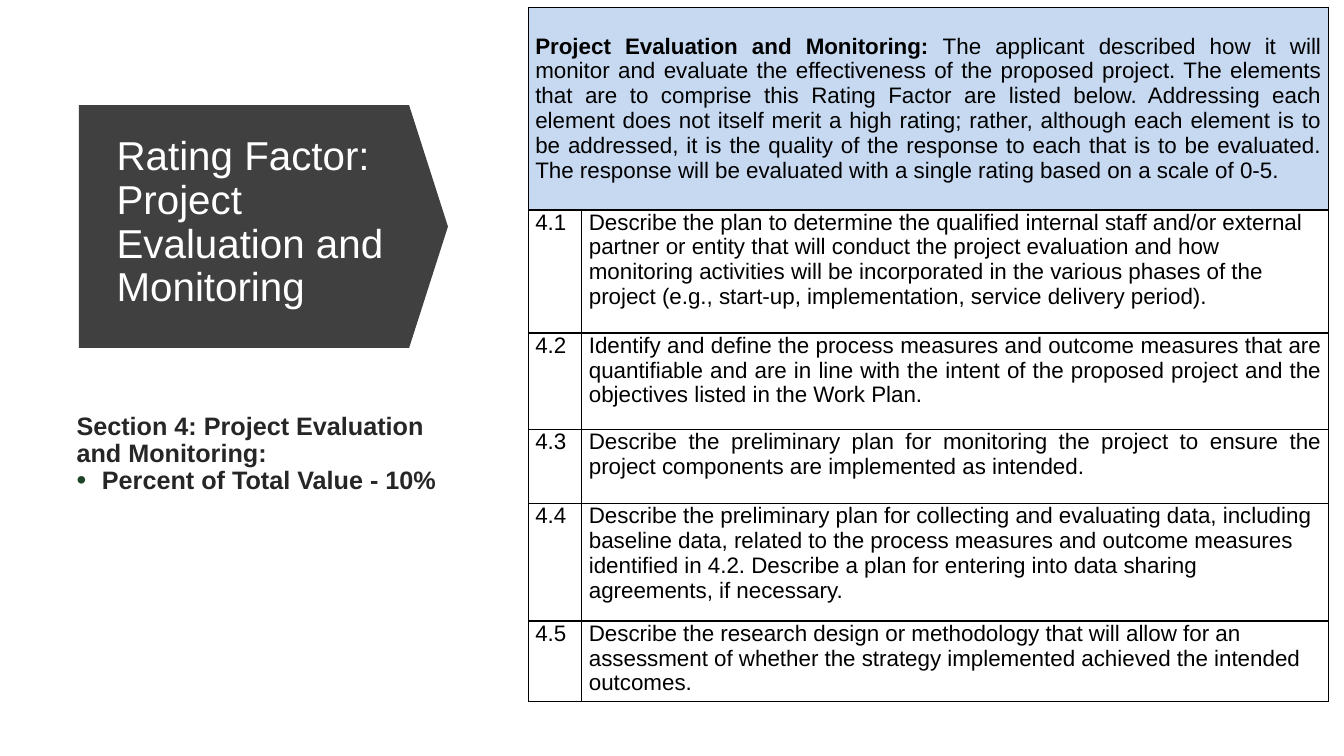
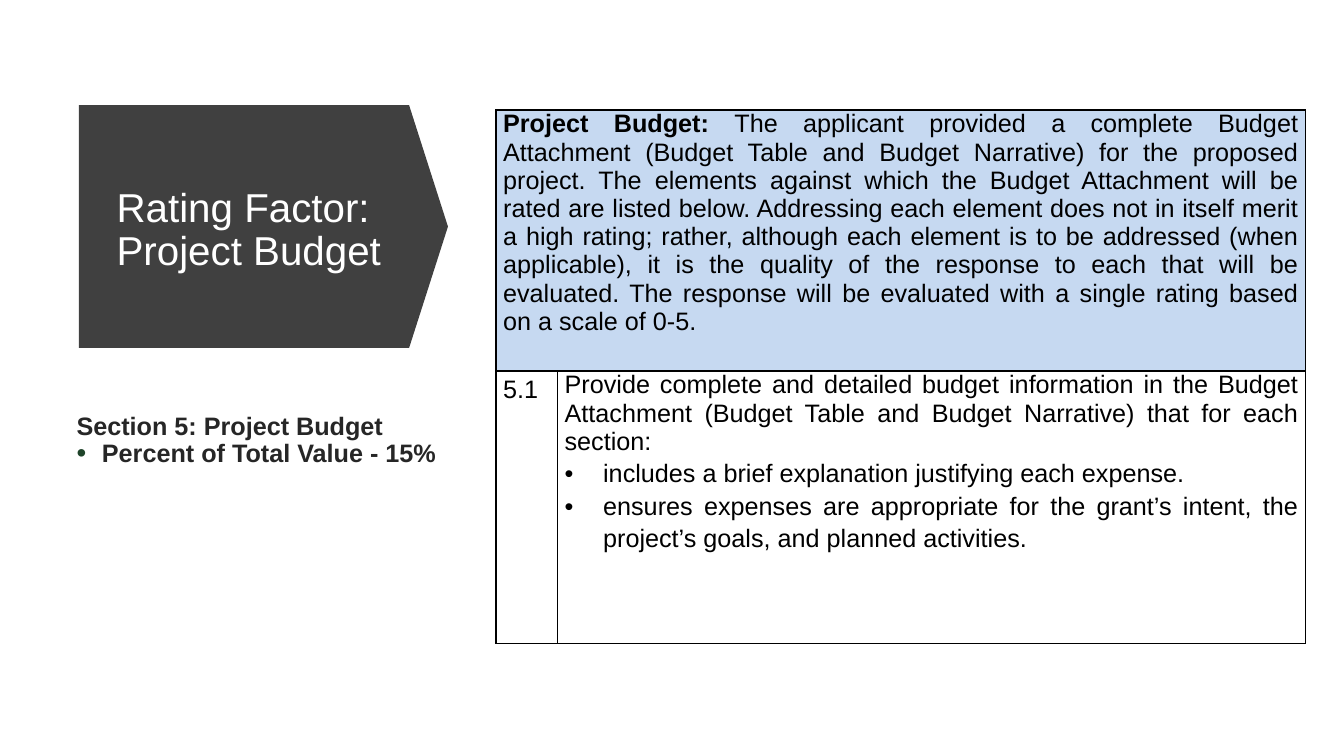
from dataclasses import dataclass

import lxml.etree
import pptx
import pptx.dml.color
import pptx.enum.shapes
import pptx.enum.text
import pptx.oxml
import pptx.oxml.ns
import pptx.util

Cm = pptx.util.Cm
Pt = pptx.util.Pt
ALIGN = pptx.enum.text.PP_ALIGN
ANCHOR = pptx.enum.text.MSO_ANCHOR
COLORS = {
    "arrow": "404040",
    "title": "FFFFFF",
    "body": "262626",
    "bullet": "1F442A",
    "text": "000000",
    "border": "000000",
    "header": "C6D9F1",
    "cell": "FFFFFF",
}


def color(name):
    return pptx.dml.color.RGBColor.from_string(COLORS[name])


@dataclass
class Line:
    text: str
    lead: str = ""
    bold: bool = False
    justify: bool = False
    spacing: float = 1.0
    after: float = 0
    indent: float = 0
    bullet_color: str = ""
    bullet_size: int = 100


class Deck:
    """Holds the shared style and the slide being built."""

    font = "Arial"

    def __init__(self):
        self.presentation = pptx.Presentation()
        self.presentation.slide_width = Cm(33.87)
        self.presentation.slide_height = Cm(19.05)
        self.slide = None

    def add_slide(self):
        layout = self.presentation.slide_layouts[6]
        self.slide = self.presentation.slides.add_slide(layout)

    def bullet(self, paragraph, line):
        properties = paragraph._p.get_or_add_pPr()
        properties.set("marL", str(Cm(line.indent)))
        properties.set("indent", str(-Cm(line.indent)))
        tag = pptx.oxml.ns.qn
        if line.bullet_color:
            fill = lxml.etree.SubElement(properties, tag("a:buClr"))
            lxml.etree.SubElement(fill, tag("a:srgbClr"), val=COLORS[line.bullet_color])
        lxml.etree.SubElement(properties, tag("a:buSzPct"), val=str(line.bullet_size * 1000))
        lxml.etree.SubElement(properties, tag("a:buFont"), typeface=self.font)
        lxml.etree.SubElement(properties, tag("a:buChar"), char="•")

    def fill_text(self, text_frame, lines, size, color_name):
        text_frame.word_wrap = True
        text_frame.text = "\n".join(line.lead or line.text for line in lines)
        for paragraph, line in zip(text_frame.paragraphs, lines):
            if line.lead:
                paragraph.add_run().text = line.text
            paragraph.alignment = ALIGN.JUSTIFY if line.justify else ALIGN.LEFT
            paragraph.line_spacing = line.spacing
            paragraph.space_after = Pt(line.after)
            if line.indent:
                self.bullet(paragraph, line)
            for run in paragraph.runs:
                run.font.name = self.font
                run.font.size = Pt(size)
                run.font.bold = line.bold
                run.font.color.rgb = color(color_name)
            if line.lead:
                paragraph.runs[0].font.bold = True

    def text(self, box, lines, size, color_name, anchor=ANCHOR.TOP):
        shape = self.slide.shapes.add_textbox(*map(Cm, box))
        shape.text_frame.vertical_anchor = anchor
        self.fill_text(shape.text_frame, lines, size, color_name)

    def title(self, text, box):
        shape = self.slide.shapes.add_shape(
            pptx.enum.shapes.MSO_SHAPE.PENTAGON, Cm(1.99), Cm(2.65), Cm(9.3), Cm(6.12)
        )
        shape.adjustments[0] = 0.16
        shape.shadow.inherit = False
        shape.fill.solid()
        shape.fill.fore_color.rgb = color("arrow")
        shape.line.fill.background()
        self.text(box, [Line(text, spacing=0.9)], 28.8, "title", ANCHOR.MIDDLE)

    def section(self, heading, percent):
        lines = [
            Line(heading, bold=True, spacing=0.9),
            Line(f"Percent of Total Value - {percent}%", bold=True, spacing=0.9,
                 indent=0.64, bullet_color="bullet", bullet_size=110),
        ]
        self.text((1.68, 10.29, 10.34, 2.41), lines, 18, "body")

    def style_cell(self, cell, fill_name):
        cell.margin_left = cell.margin_right = Cm(0.18)
        cell.margin_top = cell.margin_bottom = 0
        cell.fill.solid()
        cell.fill.fore_color.rgb = color(fill_name)
        properties = cell._tc.get_or_add_tcPr()
        for index, side in enumerate("LRTB"):
            border = pptx.oxml.parse_xml(
                f'<a:ln{side} {pptx.oxml.ns.nsdecls("a")} w="{Pt(1)}"><a:solidFill>'
                f'<a:srgbClr val="{COLORS["border"]}"/></a:solidFill></a:ln{side}>'
            )
            properties.insert(index, border)

    def table(self, left, top, widths, heights, header, rows, size, anchor=ANCHOR.TOP):
        table = self.slide.shapes.add_table(
            len(heights), len(widths), Cm(left), Cm(top), Cm(sum(widths)), Cm(sum(heights))
        ).table
        table.first_row = table.horz_banding = False
        for column, width in zip(table.columns, widths):
            column.width = Cm(width)
        for row, height in zip(table.rows, heights):
            row.height = Cm(height)
        for index, row in enumerate(table.rows):
            for cell in row.cells:
                self.style_cell(cell, "cell" if index else "header")
        heading = table.cell(0, 0)
        heading.merge(table.cell(0, 1))
        heading.vertical_anchor = anchor
        self.fill_text(heading.text_frame, [header], size, "text")
        for index, (number, lines) in enumerate(rows, 1):
            self.fill_text(table.cell(index, 0).text_frame, [number], size, "text")
            self.fill_text(table.cell(index, 1).text_frame, lines, size, "text")


def evaluation_slide(deck):
    deck.add_slide()
    deck.title("Rating Factor: Project Evaluation and Monitoring", (2.69, 2.97, 7.95, 5.31))
    deck.section("Section 4: Project Evaluation and Monitoring:", 10)
    header = Line(
        " The applicant described how it will monitor and evaluate the effectiveness of the "
        "proposed project. The elements that are to comprise this Rating Factor are listed "
        "below. Addressing each element does not itself merit a high rating; rather, although "
        "each element is to be addressed, it is the quality of the response to each that is to "
        "be evaluated. The response will be evaluated with a single rating based on a scale of 0-5.",
        lead="Project Evaluation and Monitoring:", justify=True,
    )
    elements = [
        Line("Describe the plan to determine the qualified internal staff and/or external partner "
             "or entity that will conduct the project evaluation and how monitoring activities "
             "will be incorporated in the various phases of the project (e.g., start-up, "
             "implementation, service delivery period)."),
        Line("Identify and define the process measures and outcome measures that are quantifiable "
             "and are in line with the intent of the proposed project and the objectives listed "
             "in the Work Plan.", justify=True),
        Line("Describe the preliminary plan for monitoring the project to ensure the project "
             "components are implemented as intended.", justify=True),
        Line("Describe the preliminary plan for collecting and evaluating data, including baseline "
             "data, related to the process measures and outcome measures identified in 4.2. "
             "Describe a plan for entering into data sharing agreements, if necessary."),
        Line("Describe the research design or methodology that will allow for an assessment of "
             "whether the strategy implemented achieved the intended outcomes."),
    ]
    rows = [(Line(f"4.{index}"), [element]) for index, element in enumerate(elements, 1)]
    deck.table(13.31, 0.18, (1.35, 18.82), (5.11, 3.1, 2.44, 1.85, 2.97, 1.7),
               header, rows, 16, ANCHOR.MIDDLE)


def budget_slide(deck):
    deck.add_slide()
    deck.title("Rating Factor: Project Budget", (2.69, 3.35, 7.42, 4.95))
    deck.section("Section 5: Project Budget", 15)
    header = Line(
        "The applicant provided a complete Budget Attachment (Budget Table and Budget Narrative) "
        "for the proposed project. The elements against which the Budget Attachment will be rated "
        "are listed below. Addressing each element does not in itself merit a high rating; rather, "
        "although each element is to be addressed (when applicable), it is the quality of the "
        "response to each that will be evaluated. The response will be evaluated with a single "
        "rating based on a scale of 0-5.",
        lead="Project Budget: ", justify=True,
    )
    requirements = [
        "includes a brief explanation justifying each expense.",
        "ensures expenses are appropriate for the grant’s intent, the project’s goals, "
        "and planned activities.",
    ]
    lines = [
        Line("Provide complete and detailed budget information in the Budget Attachment (Budget "
             "Table and Budget Narrative) that for each section:", justify=True),
        *(Line(text, justify=True, spacing=1.15, indent=0.97) for text in requirements),
    ]
    rows = [(Line("5.1", spacing=1.15, after=10), lines)]
    deck.table(12.5, 2.77, (1.55, 18.85), (6.58, 6.86), header, rows, 18)


def main():
    deck = Deck()
    evaluation_slide(deck)
    budget_slide(deck)
    deck.presentation.save("out.pptx")


if __name__ == "__main__":
    main()
